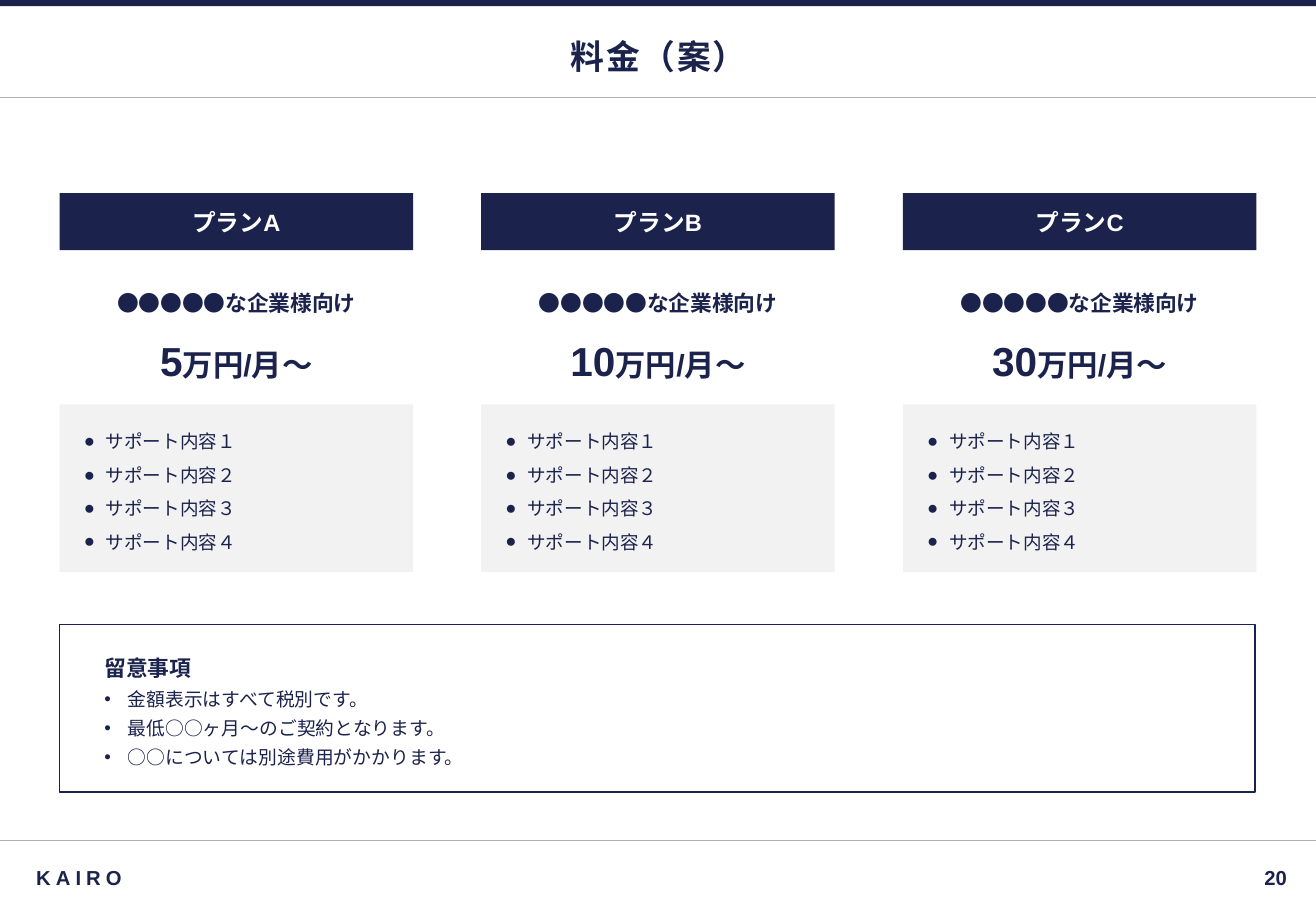
from lxml import etree
from pptx import Presentation
from pptx.dml.color import RGBColor
from pptx.enum import shapes, text
from pptx.oxml import ns
from pptx.util import Inches, Pt

NAVY = RGBColor(0x1B, 0x22, 0x4C)
WHITE = RGBColor(0xFF, 0xFF, 0xFF)
PALE = RGBColor(0xF2, 0xF2, 0xF2)
GREY = RGBColor(0xAF, 0xAF, 0xAF)
LATIN, JAPANESE = "Arial", "Noto Sans CJK JP"
LEFT, CENTER, RIGHT = text.PP_ALIGN.LEFT, text.PP_ALIGN.CENTER, text.PP_ALIGN.RIGHT
THIN = (0.04, 0.04, 0.04, 0.04)

deck = Presentation()
deck.slide_width, deck.slide_height = Inches(10.83), Inches(7.5)
page = deck.slides.add_slide(deck.slide_layouts[6])


def add_box(area, insets=THIN, fill=None, outline=None, middle=True):
    """Add a rectangle if it has a fill or outline, otherwise a text box."""
    place = [Inches(value) for value in area]
    if fill is None and outline is None:
        box = page.shapes.add_textbox(*place)
    else:
        box = page.shapes.add_shape(shapes.MSO_SHAPE.RECTANGLE, *place)
        box.shadow.inherit = False
        if fill is None:
            box.fill.background()
        else:
            box.fill.solid()
            box.fill.fore_color.rgb = fill
        if outline is None:
            box.line.fill.background()
        else:
            box.line.color.rgb = outline
            box.line.width = Pt(1)
    frame = box.text_frame
    frame.word_wrap = True
    frame.vertical_anchor = text.MSO_ANCHOR.MIDDLE if middle else text.MSO_ANCHOR.TOP
    (frame.margin_left, frame.margin_top,
     frame.margin_right, frame.margin_bottom) = [Inches(value) for value in insets]
    return frame


def write(para, spans, align=LEFT, color=NAVY, bold=True, font=LATIN,
          tracking=0, bullet=None, indent=0):
    """Fill a paragraph with (wording, size) spans, tracking in points."""
    para.alignment = align
    if bullet:
        props = para._p.get_or_add_pPr()
        props.set("marL", str(Inches(indent)))
        props.set("indent", str(-Inches(indent)))
        tint = etree.SubElement(props, ns.qn("a:buClr"))
        etree.SubElement(tint, ns.qn("a:srgbClr"), val=str(color))
        etree.SubElement(props, ns.qn("a:buFont"), typeface=LATIN)
        etree.SubElement(props, ns.qn("a:buChar"), char=bullet)
    for wording, size in spans:
        span = para.add_run()
        span.text = wording
        span.font.size = Pt(size)
        span.font.bold = bold
        span.font.color.rgb = color
        span.font.name = font
        props = span._r.get_or_add_rPr()
        etree.SubElement(props, ns.qn("a:ea"), typeface=JAPANESE)
        if tracking:
            props.set("spc", str(tracking * 100))


# Header and footer
for y in (6.92, 0.8):
    rule = page.shapes.add_connector(
        shapes.MSO_CONNECTOR.STRAIGHT, Inches(0), Inches(y), Inches(10.83), Inches(y))
    rule.line.color.rgb = GREY
    rule.line.width = Pt(0.75)
    etree.SubElement(rule._element.spPr, ns.qn("a:effectLst"))
add_box((0, 0, 10.83, 0.05), fill=NAVY)
title = add_box((0.5, 0.21, 9.84, 0.51))
write(title.paragraphs[0], [("料金（案）", 20)], CENTER, font=JAPANESE, tracking=1)
company = add_box((0.2, 7.07, 8.66, 0.31), (0.1, 0.05, 0.1, 0.05))
write(company.paragraphs[0], [("KAIRO", 12)], tracking=3)
number = add_box((9.06, 7.07, 1.57, 0.31))
write(number.paragraphs[0], [("20", 12)], RIGHT)

# Plan columns
WIDTH, STEP = 2.91, 3.47
for column, (plan, price) in enumerate([("A", "5"), ("B", "10"), ("C", "30")]):
    x = 0.49 + column * STEP
    heading = add_box((x, 1.59, WIDTH, 0.47), (0.1, 0.05, 0.1, 0.05), NAVY)
    write(heading.paragraphs[0], [("プラン" + plan, 14)], CENTER, WHITE)
    audience = add_box((x, 2.29, WIDTH, 0.4))
    write(audience.paragraphs[0], [("●●●●●な企業様向け", 12.9)], CENTER)
    cost = add_box((x, 2.69, WIDTH, 0.55))
    write(cost.paragraphs[0], [(price, 24), ("万円/月〜", 18)], CENTER)
    support = add_box((x, 3.33, WIDTH, 1.38), (0.2, 0.12, 0.12, 0.16), PALE, middle=False)
    for index, digit in enumerate("１２３４"):
        para = support.add_paragraph() if index else support.paragraphs[0]
        para.line_spacing = 1.5
        write(para, [("サポート内容" + digit, 11)], bold=False, bullet="●", indent=0.18)

# Notes
add_box((0.49, 5.14, 9.84, 1.38), outline=NAVY)
notes = add_box((0.7, 5.27, 9.53, 1.14), (0.16, 0.12, 0.04, 0.12), middle=False)
write(notes.paragraphs[0], [("留意事項", 12.9)])
for note in ("金額表示はすべて税別です。",
             "最低○○ヶ月～のご契約となります。",
             "○○については別途費用がかかります。"):
    para = notes.add_paragraph()
    para.space_before = Pt(4)
    write(para, [(note, 11.1)], bold=False, bullet="•", indent=0.19)

deck.save("out.pptx")
